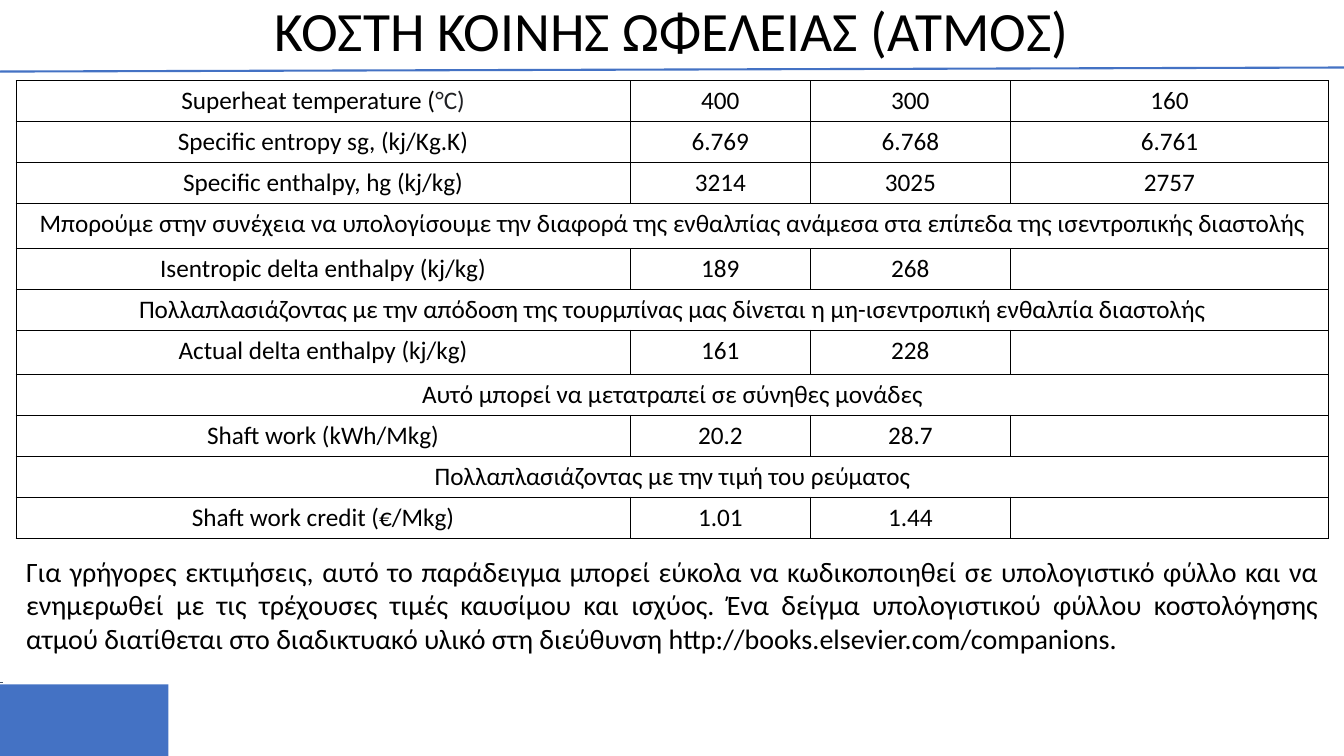
from lxml import etree
from pptx import Presentation
from pptx.dml.color import RGBColor
from pptx.enum.shapes import MSO_CONNECTOR, MSO_SHAPE
from pptx.enum.text import MSO_ANCHOR, MSO_AUTO_SIZE, PP_ALIGN
from pptx.oxml import parse_xml
from pptx.oxml.ns import nsdecls, qn
from pptx.util import Inches, Pt

STRAIGHT = MSO_CONNECTOR.STRAIGHT
RECT = MSO_SHAPE.RECTANGLE
MIDDLE = MSO_ANCHOR.MIDDLE
FIXED = MSO_AUTO_SIZE.NONE
CENTER, JUSTIFY = PP_ALIGN.CENTER, PP_ALIGN.JUSTIFY

FONT = "Calibri"
COLORS = {"text": "000000", "unit": "202124", "blue": "4472C4", "slate": "44546A"}

TITLE = "ΚΟΣΤΗ ΚΟΙΝΗΣ ΩΦΕΛΕΙΑΣ (ΑΤΜΟΣ)"
UNIT = "°C)"
ROWS = [
    ("Superheat temperature (", "400", "300", "160"),
    ("Specific entropy sg, (kj/Kg.K)", "6.769", "6.768", "6.761"),
    ("Specific enthalpy, hg (kj/kg)", "3214", "3025", "2757"),
    ("Μπορούμε στην συνέχεια να υπολογίσουμε την διαφορά της ενθαλπίας "
     "ανάμεσα στα επίπεδα της ισεντροπικής διαστολής",),
    ("Isentropic delta enthalpy (kj/kg)", "189", "268", ""),
    ("Πολλαπλασιάζοντας με την απόδοση της τουρμπίνας μας δίνεται "
     "η μη-ισεντροπική ενθαλπία διαστολής",),
    ("Actual delta enthalpy (kj/kg)", "161", "228", ""),
    ("Αυτό μπορεί να μετατραπεί σε σύνηθες μονάδες",),
    ("Shaft work (kWh/Mkg)", "20.2", "28.7", ""),
    ("Πολλαπλασιάζοντας με την τιμή του ρεύματος",),
    ("Shaft work credit (€/Mkg)", "1.01", "1.44", ""),
]
WIDTHS = (6.09, 1.79, 1.98, 3.16)
HEIGHTS = (0.4, 0.4, 0.4, 0.45, 0.39, 0.4, 0.44, 0.4, 0.38, 0.36, 0.41)
NOTE = (
    "Για γρήγορες εκτιμήσεις, αυτό το παράδειγμα μπορεί εύκολα να κωδικοποιηθεί "
    "σε υπολογιστικό φύλλο και να ενημερωθεί με τις τρέχουσες τιμές καυσίμου και "
    "ισχύος. Ένα δείγμα υπολογιστικού φύλλου κοστολόγησης ατμού διατίθεται στο "
    "διαδικτυακό υλικό στη διεύθυνση http://books.elsevier.com/companions."
)
LINES = [
    ((0, 6.77), (0.03, 6.77), "slate", 0.5),
    ((0, 0.71), (13.33, 0.67), "blue", 1.5),
]


def color(name):
    return RGBColor.from_string(COLORS[name])


def style(para, size, align):
    para.alignment = align
    para.font.name = FONT
    para.font.size = Pt(size)
    para.font.color.rgb = color("text")


def place(shape, *box):
    shape.left, shape.top, shape.width, shape.height = map(Inches, box)


def border(cell):
    props = cell._tc.get_or_add_tcPr()
    for i, side in enumerate("LRTB"):
        props.insert(i, parse_xml(
            f'<a:ln{side} {nsdecls("a")} w="12700"><a:solidFill>'
            f'<a:srgbClr val="{COLORS["text"]}"/></a:solidFill></a:ln{side}>'))


def add_line(slide, start, end, name, width):
    line = slide.shapes.add_connector(STRAIGHT, *map(Inches, start + end))
    line.line.color.rgb = color(name)
    line.line.width = Pt(width)
    etree.SubElement(line._element.spPr, qn("a:effectLst"))


def add_grid(slide):
    frame = slide.shapes.add_table(
        len(ROWS), len(WIDTHS), Inches(0.16), Inches(0.8),
        Inches(sum(WIDTHS)), Inches(sum(HEIGHTS)))
    table = frame.table
    table.first_row = table.horz_banding = False
    for col, width in zip(table.columns, WIDTHS):
        col.width = Inches(width)
    for r, (row, height) in enumerate(zip(ROWS, HEIGHTS)):
        table.rows[r].height = Inches(height)
        for c in range(len(WIDTHS)):
            cell = table.cell(r, c)
            cell.fill.background()
            border(cell)
            if c < len(row):
                cell.text = row[c]
            style(cell.text_frame.paragraphs[0], 18, CENTER)
        if len(row) == 1:
            table.cell(r, 0).merge(table.cell(r, len(WIDTHS) - 1))
    unit = table.cell(0, 0).text_frame.paragraphs[0].add_run()
    unit.text = UNIT
    unit.font.color.rgb = color("unit")


def main():
    deck = Presentation()
    deck.slide_width, deck.slide_height = Inches(13.33), Inches(7.5)
    slide = deck.slides.add_slide(deck.slide_layouts[5])

    block = slide.shapes.add_shape(RECT, 0, Inches(6.79), Inches(1.67), Inches(0.71))
    block.shadow.inherit = False
    block.fill.solid()
    block.fill.fore_color.rgb = color("blue")
    block.line.fill.background()
    for line in LINES:
        add_line(slide, *line)

    title = slide.shapes.title
    place(title, 0, 0, 13.33, 0.66)
    title.text = TITLE
    title.text_frame.auto_size = FIXED
    title.text_frame.vertical_anchor = MIDDLE
    head = title.text_frame.paragraphs[0]
    head.line_spacing = 0.9
    style(head, 39.6, CENTER)

    add_grid(slide)

    note = slide.shapes.add_textbox(Inches(0.16), Inches(5.45), Inches(13.02), Inches(1.11))
    note.text_frame.word_wrap = True
    note.text_frame.text = NOTE
    style(note.text_frame.paragraphs[0], 20, JUSTIFY)

    deck.save("out.pptx")


if __name__ == "__main__":
    main()
